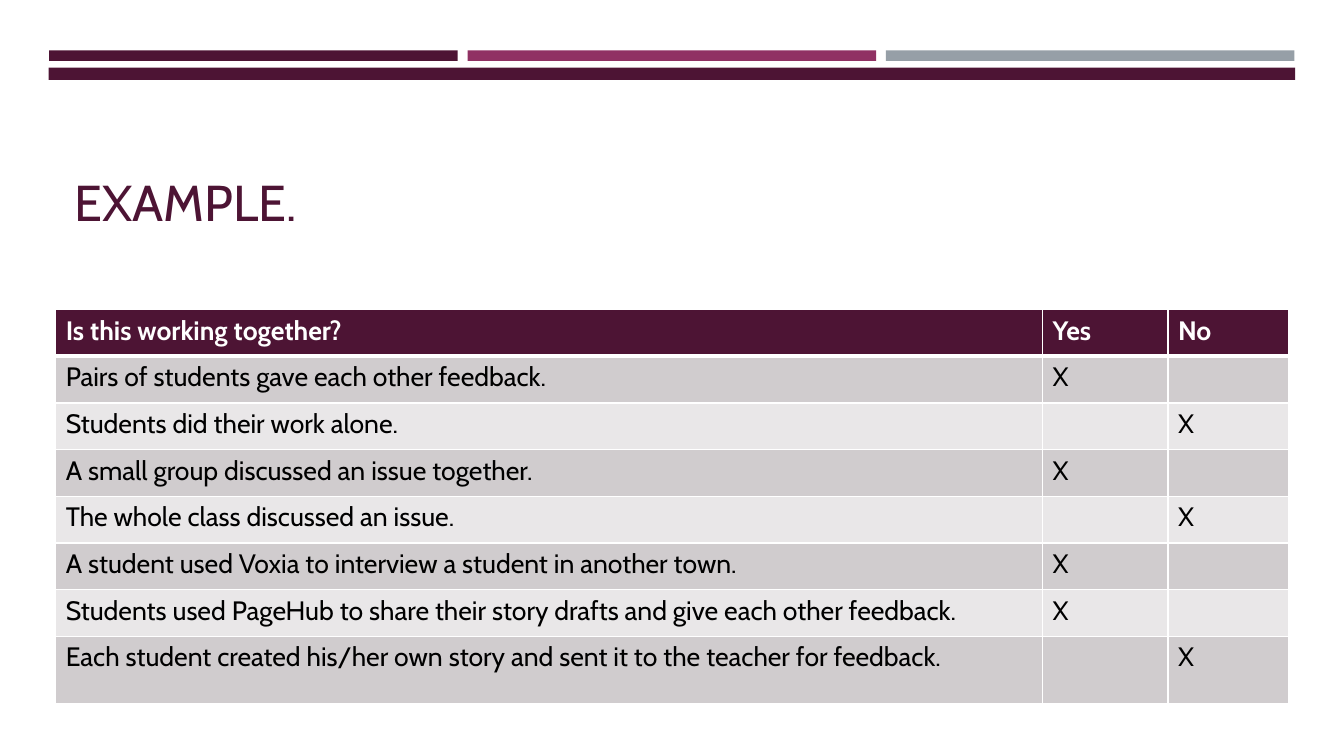
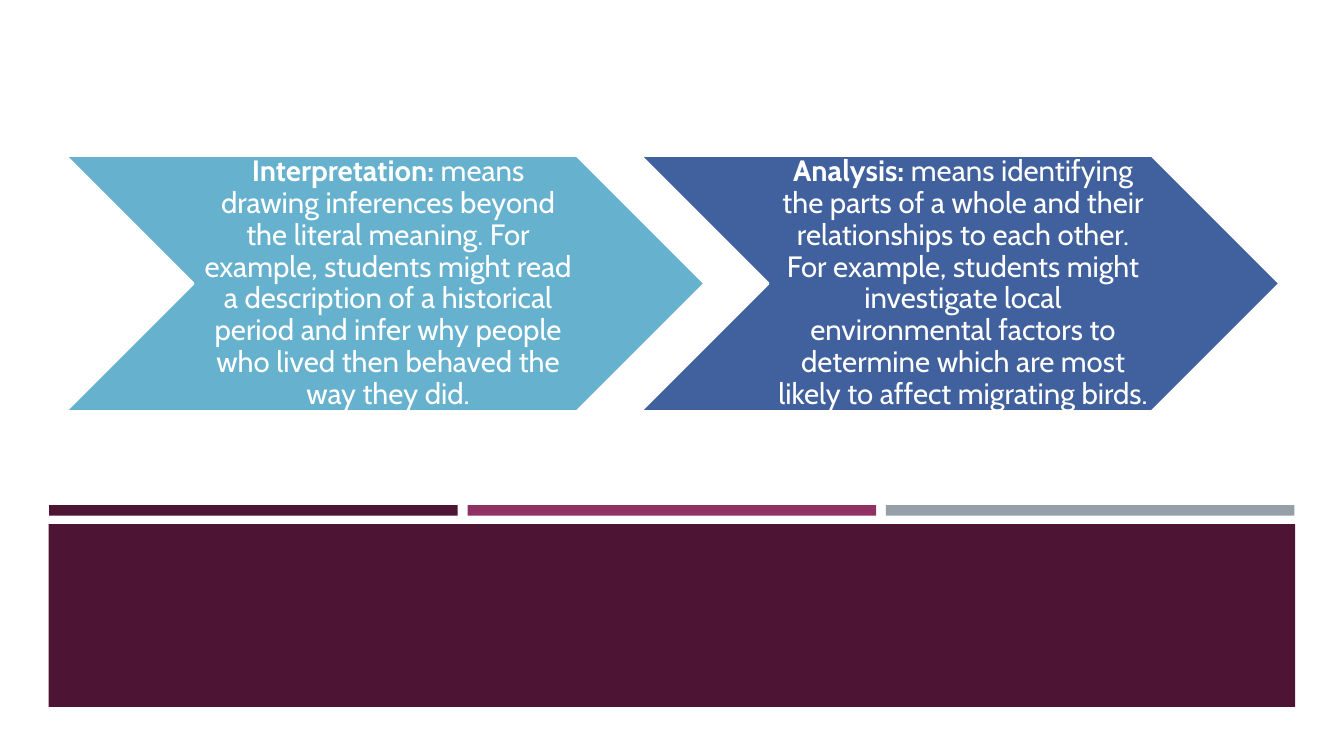
from lxml import etree
from pptx import Presentation
from pptx.dml.color import RGBColor
from pptx.enum.shapes import MSO_SHAPE
from pptx.enum.text import MSO_ANCHOR, PP_ALIGN
from pptx.oxml.ns import qn
from pptx.util import Pt

RECTANGLE, CHEVRON = MSO_SHAPE.RECTANGLE, MSO_SHAPE.CHEVRON
MIDDLE, BOTTOM = MSO_ANCHOR.MIDDLE, MSO_ANCHOR.BOTTOM
LEFT, CENTER = PP_ALIGN.LEFT, PP_ALIGN.CENTER
TITLE_ONLY, BLANK = 5, 6

# Shared style
FONT = "Cabin"
PLUM, BERRY, GREY = "4D1434", "903163", "969FA7"
WHITE, BLACK = "FFFFFF", "000000"
ROW_FILLS = ("D0CCCE", "E9E7E8")
STRIPES = (PLUM, BERRY, GREY)
STRIPE_LEFT, STRIPE_WIDTH, STRIPE_HEIGHT, STRIPE_STEP = 35.1, 291.8, 7.6, 298.9
BAND_LEFT, BAND_WIDTH = 34.8, 890.4

# Content
TITLE = "EXAMPLE."
HEADER = ("Is this working together?", "Yes", "No")
STATEMENTS = [
    ("Pairs of students gave each other feedback.", True),
    ("Students did their work alone.", False),
    ("A small group discussed an issue together.", True),
    ("The whole class discussed an issue.", False),
    ("A student used Voxia to interview a student in another town.", True),
    ("Students used PageHub to share their story drafts and give each other feedback.", True),
    ("Each student created his/her own story and sent it to the teacher for feedback.", False),
]
COLUMN_WIDTHS = (704.9, 89.6, 86.1)
ROW_HEIGHT, LAST_ROW_HEIGHT = 33.35, 48.1

CHEVRONS = [
    ("Interpretation:",
     " means drawing inferences beyond the literal meaning. For example, students might read "
     "a description of a historical period and infer why people who lived then behaved the "
     "way they did.", "66B1CE"),
    ("Analysis:",
     " means identifying the parts of a whole and their relationships to each other. For "
     "example, students might investigate local environmental factors to determine which are "
     "most likely to affect migrating birds.", "40619D"),
]
CHEVRON_LEFT, CHEVRON_TOP, CHEVRON_STEP = 46.8, 111.2, 410.7
CHEVRON_WIDTH, CHEVRON_HEIGHT = 456.5, 182.6


def color(value):
    return RGBColor.from_string(value)


def style(para, size, text_color, bold=False, align=LEFT):
    para.alignment = align
    font = para.font
    font.name, font.size, font.bold = FONT, Pt(size), bold
    font.color.rgb = color(text_color)


def add_box(page, kind, left, top, width, height, fill):
    box = page.shapes.add_shape(kind, Pt(left), Pt(top), Pt(width), Pt(height))
    box.shadow.inherit = False
    box.fill.solid()
    box.fill.fore_color.rgb = color(fill)
    box.line.fill.background()
    return box


def add_bands(page, stripe_top, band_top, band_height):
    """Three stripes above one full-width band."""
    for index, fill in enumerate(STRIPES):
        add_box(page, RECTANGLE, STRIPE_LEFT + index * STRIPE_STEP, stripe_top,
                STRIPE_WIDTH, STRIPE_HEIGHT, fill)
    add_box(page, RECTANGLE, BAND_LEFT, band_top, BAND_WIDTH, band_height, PLUM)


def set_borders(cell, top, bottom):
    properties = cell._tc.get_or_add_tcPr()
    for side, width in (("L", 1), ("R", 1), ("T", top), ("B", bottom)):
        line = etree.SubElement(properties, qn(f"a:ln{side}"), w=str(Pt(width)))
        fill = etree.SubElement(line, qn("a:solidFill"))
        etree.SubElement(fill, qn("a:srgbClr"), val=WHITE)


def fill_cell(cell, text, row):
    is_header = row == 0
    set_borders(cell, 3 if row == 1 else 1, 3 if is_header else 1)
    cell.fill.solid()
    cell.fill.fore_color.rgb = color(PLUM if is_header else ROW_FILLS[(row - 1) % 2])
    cell.text = text
    style(cell.text_frame.paragraphs[0], 19, WHITE if is_header else BLACK, is_header)


def build_example(deck):
    page = deck.slides.add_slide(deck.slide_layouts[TITLE_ONLY])
    add_bands(page, 36, 48.3, 8.7)

    # Title
    title = page.shapes.title
    title.left, title.top, title.width, title.height = Pt(46.1), Pt(56.9), Pt(865.4), Pt(112.3)
    title.text_frame.text = TITLE
    title.text_frame.vertical_anchor = BOTTOM
    style(title.text_frame.paragraphs[0], 36, PLUM)

    # Table
    rows = [HEADER] + [(text, "X" if yes else "", "" if yes else "X")
                       for text, yes in STATEMENTS]
    heights = [ROW_HEIGHT] * (len(rows) - 1) + [LAST_ROW_HEIGHT]
    table = page.shapes.add_table(len(rows), len(HEADER), Pt(39.8), Pt(221.2),
                                  Pt(sum(COLUMN_WIDTHS)), Pt(sum(heights))).table
    for column, width in zip(table.columns, COLUMN_WIDTHS):
        column.width = Pt(width)
    for row, (texts, height) in enumerate(zip(rows, heights)):
        table.rows[row].height = Pt(height)
        for column, text in enumerate(texts):
            fill_cell(table.cell(row, column), text, row)


def build_chevrons(deck):
    page = deck.slides.add_slide(deck.slide_layouts[BLANK])
    add_bands(page, 360.8, 374.4, 130.5)
    for index, (term, meaning, fill) in enumerate(CHEVRONS):
        box = add_box(page, CHEVRON, CHEVRON_LEFT + index * CHEVRON_STEP, CHEVRON_TOP,
                      CHEVRON_WIDTH, CHEVRON_HEIGHT, fill)
        box.line.color.rgb = color(WHITE)
        box.line.width = Pt(1.75)
        frame = box.text_frame
        frame.word_wrap = True
        frame.vertical_anchor = MIDDLE
        frame.margin_left = Pt(6.5)
        frame.margin_top = frame.margin_right = frame.margin_bottom = Pt(2.2)
        para = frame.paragraphs[0]
        style(para, 21, WHITE, align=CENTER)
        para.line_spacing = 0.9
        for text, bold in ((term, True), (meaning, False)):
            span = para.add_run()
            span.text = text
            span.font.bold = bold


def main():
    deck = Presentation()
    deck.slide_width, deck.slide_height = Pt(960), Pt(540)
    build_example(deck)
    build_chevrons(deck)
    deck.save("out.pptx")


if __name__ == "__main__":
    main()
